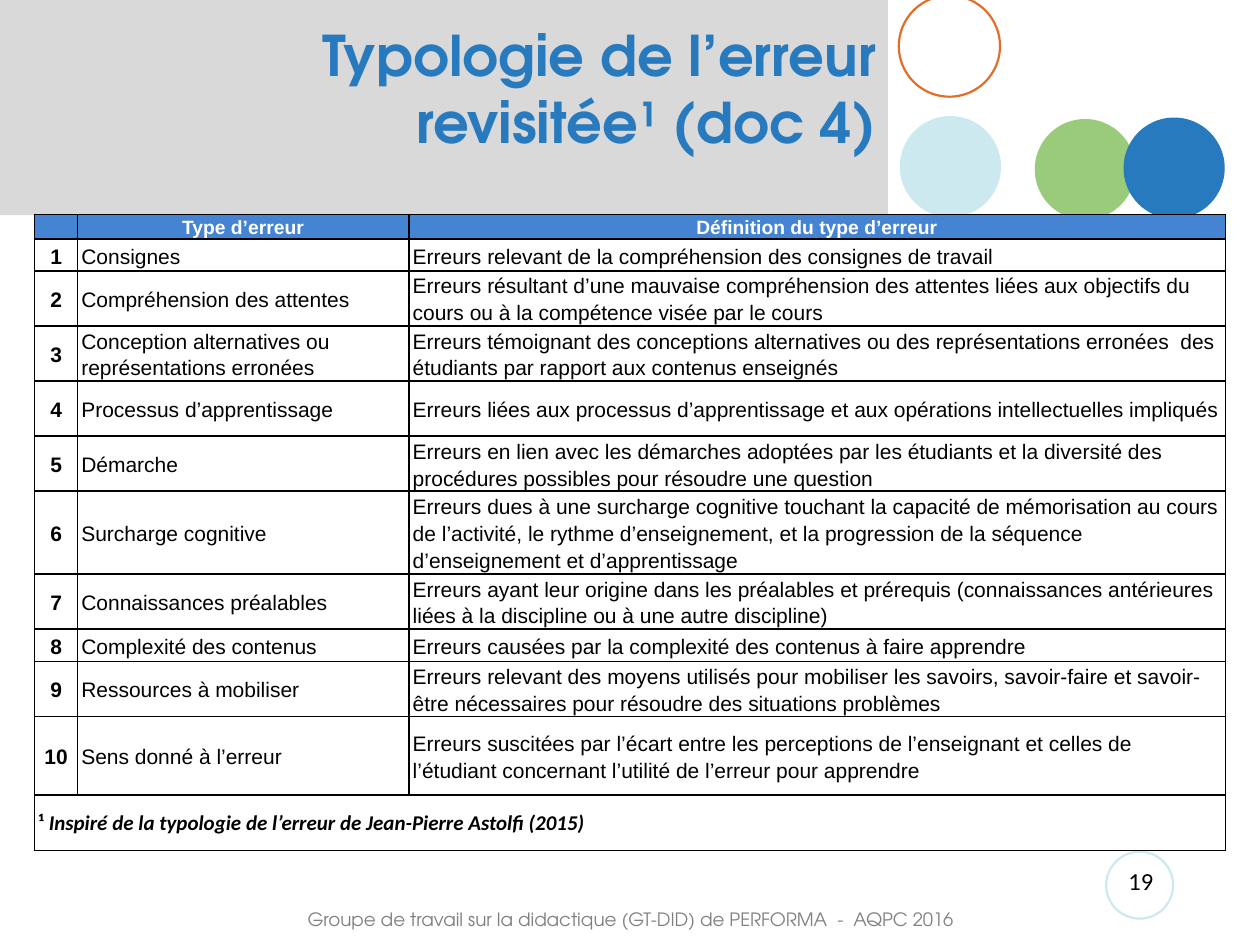
from lxml.etree import SubElement
from pptx import Presentation
from pptx.dml.color import RGBColor
from pptx.enum.shapes import MSO_SHAPE
from pptx.enum.text import MSO_ANCHOR, PP_ALIGN
from pptx.oxml.ns import qn
from pptx.util import Cm, Pt

# Content
TITLE = "Typologie de l’erreur revisitée¹ (doc 4)"
FOOTER = "Groupe de travail sur la didactique (GT-DID) de PERFORMA  -  AQPC 2016"
PAGE_NUMBER = "19"
HEADER = ("", "Type d’erreur", "Définition du type d’erreur")
ERRORS = [  # type, definition, row height in cm
    ("Consignes",
     "Erreurs relevant de la compréhension des consignes de travail", 0.64),
    ("Compréhension des attentes",
     "Erreurs résultant d’une mauvaise compréhension des attentes liées aux objectifs du "
     "cours ou à la compétence visée par le cours", 1.11),
    ("Conception alternatives ou représentations erronées",
     "Erreurs témoignant des conceptions alternatives ou des représentations erronées  des "
     "étudiants par rapport aux contenus enseignés", 1.11),
    ("Processus d’apprentissage",
     "Erreurs liées aux processus d’apprentissage et aux opérations intellectuelles "
     "impliqués", 1.11),
    ("Démarche",
     "Erreurs en lien avec les démarches adoptées par les étudiants et la diversité des "
     "procédures possibles pour résoudre une question", 1.11),
    ("Surcharge cognitive",
     "Erreurs dues à une surcharge cognitive touchant la capacité de mémorisation au cours "
     "de l’activité, le rythme d’enseignement, et la progression de la séquence "
     "d’enseignement et d’apprentissage", 1.67),
    ("Connaissances préalables",
     "Erreurs ayant leur origine dans les préalables et prérequis (connaissances "
     "antérieures liées à la discipline ou à une autre discipline)", 1.11),
    ("Complexité des contenus",
     "Erreurs causées par la complexité des contenus à faire apprendre", 0.65),
    ("Ressources à mobiliser",
     "Erreurs relevant des moyens utilisés pour mobiliser les savoirs, savoir-faire et "
     "savoir-être nécessaires pour résoudre des situations problèmes", 1.11),
    ("Sens donné à l’erreur",
     "Erreurs suscitées par l’écart entre les perceptions de l’enseignant et celles de "
     "l’étudiant concernant l’utilité de l’erreur pour apprendre", 1.59),
]
NOTE = ("¹ ", "Inspiré de la typologie de l’erreur de Jean-Pierre Astolfi (2015)")

# Layout in cm
HEADER_HEIGHT, NOTE_HEIGHT = 0.5, 1.11
COLUMN_WIDTHS = (0.86, 6.68, 16.46)
CIRCLES = [  # left, top, diameter, fill, line
    (20.86, 2.4, 2.03, "9ACB7A", None),
    (18.12, -0.09, 2.04, None, "E36D26"),
    (18.14, 2.34, 2.04, "CCE9EF", None),
    (22.65, 2.37, 2.04, "287ABF", None),
    (22.3, 17.17, 1.35, None, "CCE9EF"),
]
DISPLAY_FONT = "TeX Gyre Adventor"
LINE_PITCH = 1.28  # table line height per point of text size


def color(value):
    return RGBColor.from_string(value)


def add_shape(page, kind, left, top, width, height, fill=None, line=None):
    shape = page.shapes.add_shape(kind, Cm(left), Cm(top), Cm(width), Cm(height))
    shape.shadow.inherit = False
    if fill:
        shape.fill.solid()
        shape.fill.fore_color.rgb = color(fill)
    else:
        shape.fill.background()
    if line:
        shape.line.color.rgb = color(line)
        shape.line.width = Pt(1.25)
    else:
        shape.line.fill.background()


def style(para, size, name, ink, bold=False, align=PP_ALIGN.LEFT):
    para.alignment = align
    font = para.font
    font.size, font.name, font.bold = Pt(size), name, bold
    font.color.rgb = color(ink)


def add_text(page, text, left, top, width, height, *look, anchor=MSO_ANCHOR.TOP, **options):
    box = page.shapes.add_textbox(Cm(left), Cm(top), Cm(width), Cm(height))
    frame = box.text_frame
    frame.word_wrap = True
    frame.vertical_anchor = anchor
    frame.text = text
    style(frame.paragraphs[0], *look, **options)


def format_cell(cell, fill, anchor):
    cell.margin_left = cell.margin_right = Cm(0.08)
    cell.margin_top = cell.margin_bottom = 0
    cell.vertical_anchor = anchor
    properties = cell._tc.get_or_add_tcPr()
    for side in ("a:lnL", "a:lnR", "a:lnT", "a:lnB"):
        border = SubElement(properties, qn(side), w=str(Pt(1)))
        solid = SubElement(border, qn("a:solidFill"))
        SubElement(solid, qn("a:srgbClr"), val="000000")
    cell.fill.solid()
    cell.fill.fore_color.rgb = color(fill)


def fill_cell(cell, texts, size, *look, **options):
    para = cell.text_frame.paragraphs[0]
    para.line_spacing = Pt(round(size * LINE_PITCH, 1))
    para.space_after = Pt(10)
    style(para, size, *look, **options)
    for text in texts:
        para.add_run().text = text
    return para


def add_error_table(page):
    heights = [HEADER_HEIGHT, *(error[2] for error in ERRORS), NOTE_HEIGHT]
    table = page.shapes.add_table(
        len(heights), len(COLUMN_WIDTHS), Cm(0.7), Cm(4.32),
        Cm(sum(COLUMN_WIDTHS)), Cm(sum(heights))).table
    for column, width in zip(table.columns, COLUMN_WIDTHS):
        column.width = Cm(width)
    for index, (row, height) in enumerate(zip(table.rows, heights)):
        row.height = Cm(height)
        for cell in row.cells:
            if index == 0:
                format_cell(cell, "4484D3", MSO_ANCHOR.TOP)
            else:
                format_cell(cell, "FFFFFF", MSO_ANCHOR.MIDDLE)

    # Header row; the empty corner needs its own size to keep the row low
    for column, text in enumerate(HEADER):
        para = fill_cell(table.cell(0, column), [text] if text else [], 11, "Arial", "FFFFFF",
                         bold=True, align=PP_ALIGN.CENTER)
        if not text:
            SubElement(para._p, qn("a:endParaRPr"), sz="1100")

    # Numbered error types
    for number, (kind, definition, _) in enumerate(ERRORS, 1):
        fill_cell(table.cell(number, 0), [str(number)], 12, "Arial", "000000",
                  bold=True, align=PP_ALIGN.CENTER)
        for column, text in enumerate((kind, definition), 1):
            fill_cell(table.cell(number, column), [text], 12, "Arial", "000000")

    # Source note across the full width
    last = len(heights) - 1
    table.cell(last, 0).merge(table.cell(last, len(COLUMN_WIDTHS) - 1))
    para = fill_cell(table.cell(last, 0), NOTE, 12, "Calibri", "000000", bold=True)
    para.runs[1].font.italic = True


def main():
    deck = Presentation()
    deck.slide_width, deck.slide_height = Cm(25.4), Cm(19.05)
    page = deck.slides.add_slide(deck.slide_layouts[6])

    # Title band and circles
    add_shape(page, MSO_SHAPE.RECTANGLE, 0, 0, 17.9, 4.34, fill="D9D9D9")
    for left, top, size, fill, line in CIRCLES:
        add_shape(page, MSO_SHAPE.OVAL, left, top, size, size, fill, line)

    # Page number, footer and title
    add_text(page, PAGE_NUMBER, 22.3, 17.33, 1.4, 1.02, 14, "Calibri", "000000",
             align=PP_ALIGN.CENTER)
    add_text(page, FOOTER, 5.95, 18.19, 14.94, 0.74, 10.5, DISPLAY_FONT, "808080")
    add_text(page, TITLE, 1.3, 0, 16.62, 3.53, 32, DISPLAY_FONT, "287ABF",
             bold=True, align=PP_ALIGN.RIGHT, anchor=MSO_ANCHOR.MIDDLE)

    add_error_table(page)
    deck.save("out.pptx")


if __name__ == "__main__":
    main()
